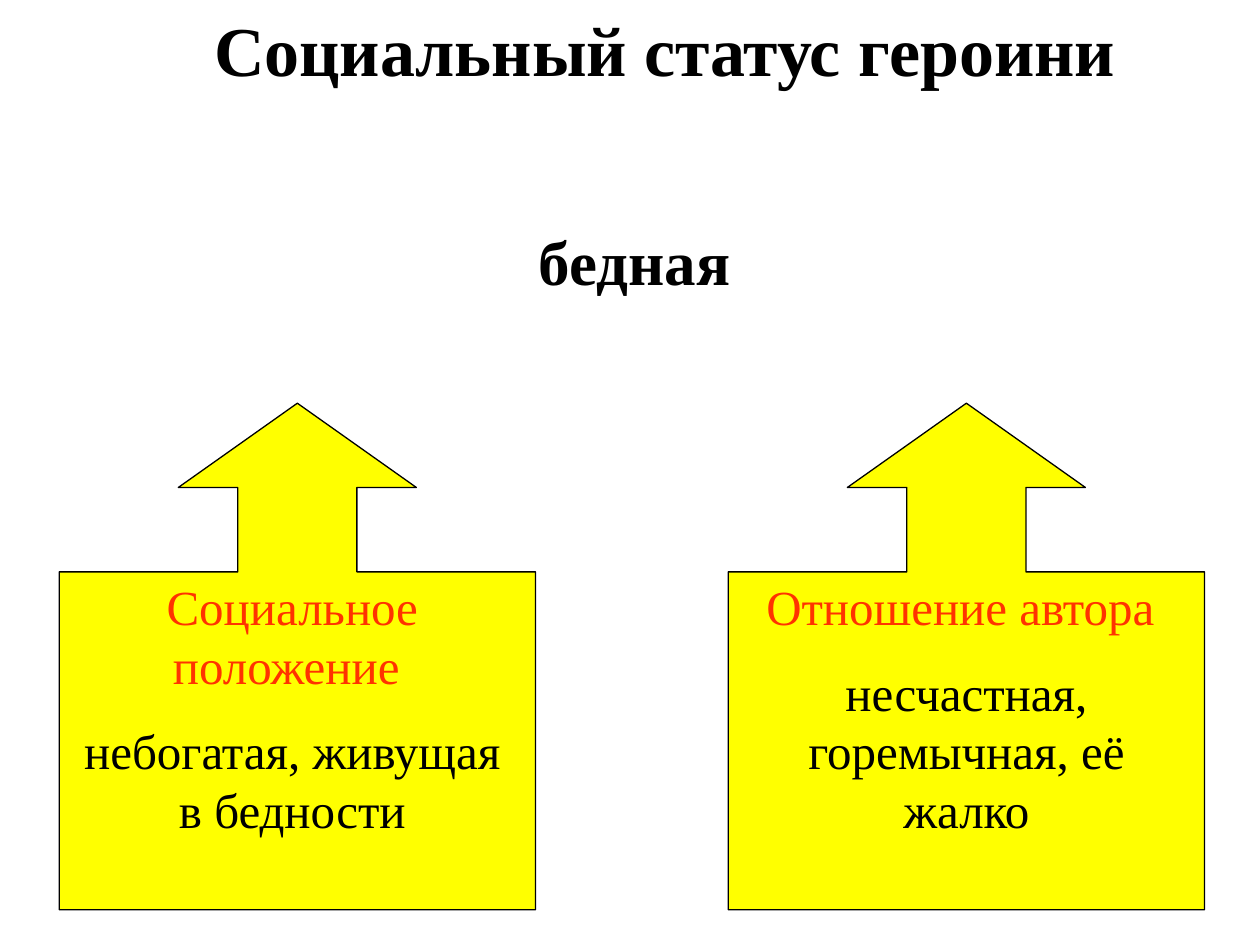
from pptx import Presentation
from pptx.dml.color import RGBColor
from pptx.enum.shapes import MSO_SHAPE
from pptx.enum.text import MSO_ANCHOR, MSO_AUTO_SIZE, PP_ALIGN
from pptx.util import Inches, Pt

CALLOUT = MSO_SHAPE.UP_ARROW_CALLOUT
CENTER = PP_ALIGN.CENTER
TOP = MSO_ANCHOR.TOP
NO_AUTOFIT = MSO_AUTO_SIZE.NONE

FONT = "Times New Roman"
BLACK, RED, YELLOW = "000000", "FF3300", "FFFF00"

TITLE = "Социальный статус героини "
EPITHET = "бедная"
# heading, meaning, callout left, text left, text width
MEANINGS = [
    ("Социальное положение ", "небогатая, живущая в бедности", 0.47, 0.55, 3.54),
    ("Отношение автора ", "несчастная, горемычная, её жалко", 5.78, 5.78, 3.78),
]
CALLOUT_TOP, CALLOUT_WIDTH, CALLOUT_HEIGHT = 3.2, 3.78, 4.02
CALLOUT_ADJUSTMENTS = (0.25, 0.25, 0.177, 0.667)
TEXT_TOP, TEXT_HEIGHT = 4.53, 2.2
PARAGRAPH_GAP = 15


def color(hex_value):
    return RGBColor.from_string(hex_value)


def write(frame, lines, size, bold=False, wrap=True):
    """Fill a frame with centred (text, colour) paragraphs."""
    frame.auto_size = NO_AUTOFIT
    frame.word_wrap = wrap
    frame.vertical_anchor = TOP
    frame.text = "\n".join(text for text, _ in lines)
    for index, (paragraph, (_, hue)) in enumerate(zip(frame.paragraphs, lines)):
        paragraph.alignment = CENTER
        paragraph.space_before = Pt(PARAGRAPH_GAP if index else 0)
        for run in paragraph.runs:
            run.font.name = FONT
            run.font.size = Pt(size)
            run.font.bold = bold
            run.font.color.rgb = color(hue)


def add_callout(slide, left):
    callout = slide.shapes.add_shape(
        CALLOUT, Inches(left), Inches(CALLOUT_TOP),
        Inches(CALLOUT_WIDTH), Inches(CALLOUT_HEIGHT))
    for index, value in enumerate(CALLOUT_ADJUSTMENTS):
        callout.adjustments[index] = value
    callout.shadow.inherit = False
    callout.fill.solid()
    callout.fill.fore_color.rgb = color(YELLOW)
    callout.line.color.rgb = color(BLACK)
    callout.line.width = Pt(0.75)


def add_text(slide, left, top, width, height, lines, size, **style):
    box = slide.shapes.add_textbox(*map(Inches, (left, top, width, height)))
    write(box.text_frame, lines, size, **style)


def main():
    deck = Presentation()
    deck.slide_width, deck.slide_height = Inches(10), Inches(7.5)
    slide = deck.slides.add_slide(deck.slide_layouts.get_by_name("Title Only"))

    title = slide.shapes.title
    title.left, title.top = Inches(1.56), Inches(0)
    title.width, title.height = Inches(7.57), Inches(0.77)
    write(title.text_frame, [(TITLE, BLACK)], 40, bold=True, wrap=False)

    add_text(slide, 2.42, 1.72, 5.23, 0.95, [(EPITHET, BLACK)], 36,
             bold=True, wrap=False)

    for heading, meaning, callout_left, text_left, text_width in MEANINGS:
        add_callout(slide, callout_left)
        add_text(slide, text_left, TEXT_TOP, text_width, TEXT_HEIGHT,
                 [(heading, RED), (meaning, BLACK)], 28)

    deck.save("out.pptx")


if __name__ == "__main__":
    main()
